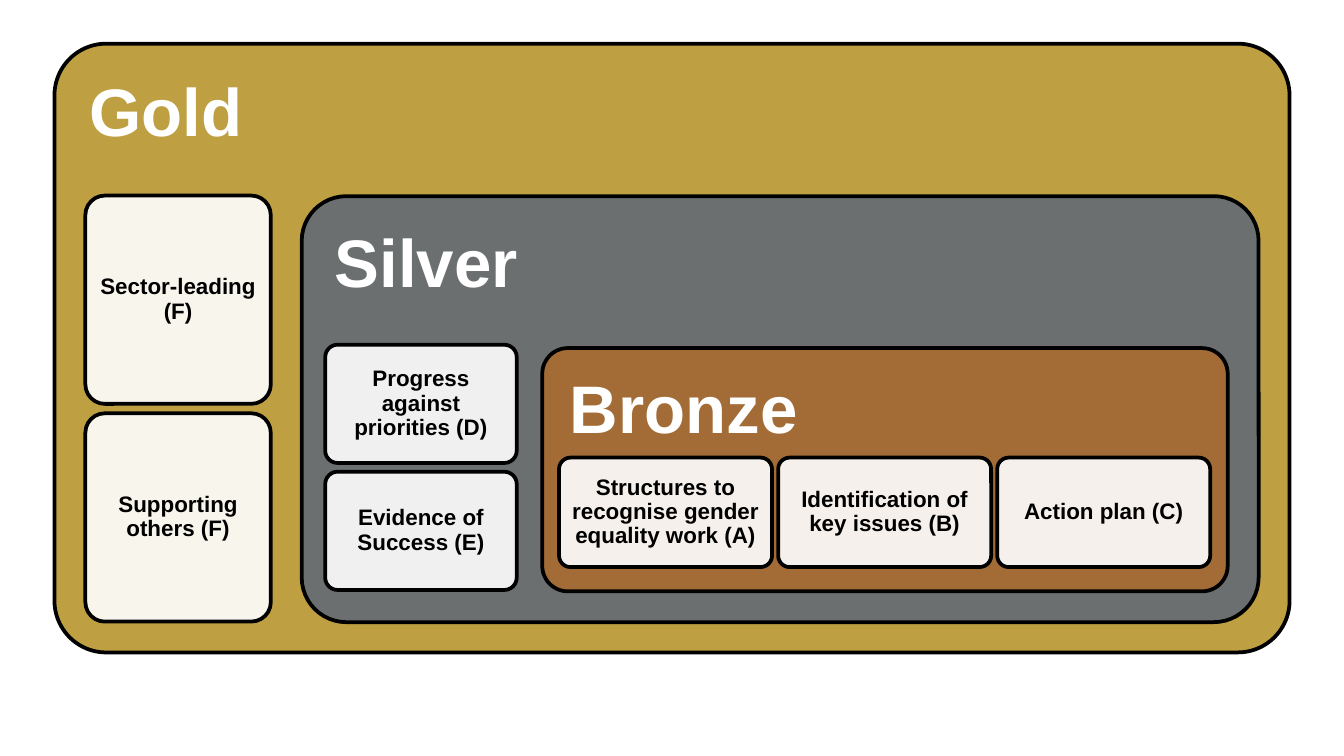
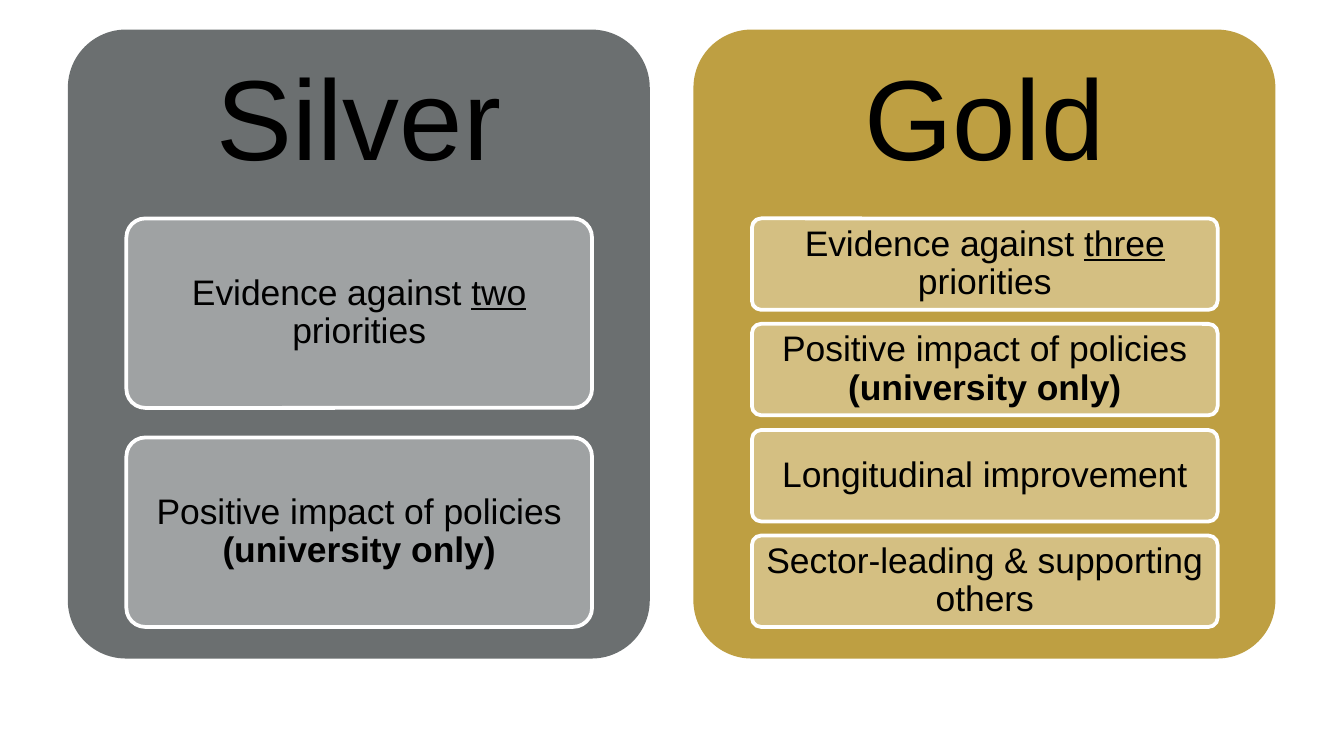
from lxml import etree
from pptx import Presentation
from pptx.dml.color import RGBColor
from pptx.enum.shapes import MSO_SHAPE
from pptx.enum.text import MSO_ANCHOR as ANCHOR, PP_ALIGN as ALIGN
from pptx.oxml.ns import qn
from pptx.util import Pt

PX = 4572
FONT = "Arial"
COLORS = {
    "gold": "BE9F42",
    "silver": "6B6F70",
    "bronze": "A36C36",
    "gold_card": "D4BF82",
    "silver_card": "9FA2A3",
    "white": "FFFFFF",
    "black": "000000",
}


def rgb(name):
    return RGBColor.from_string(COLORS[name])


def add_box(slide, box, runs, fill, line, size, color="black", radius=0.105, insets=(10, 10, 10, 10),
            bold=False, align=ALIGN.CENTER, anchor=ANCHOR.MIDDLE, opacity=100):
    sp = slide.shapes.add_shape(MSO_SHAPE.ROUNDED_RECTANGLE, *[v * PX for v in box])
    sp.shadow.inherit = False
    sp.adjustments[0] = radius
    sp.fill.solid()
    sp.fill.fore_color.rgb = rgb(fill)
    if opacity < 100:
        clr = sp._element.spPr.find(qn("a:solidFill"))[0]
        etree.SubElement(clr, qn("a:alpha")).set("val", str(opacity * 1000))
    if line:
        sp.line.color.rgb = rgb(line)
        sp.line.width = Pt(2)
    else:
        sp.line.fill.background()
    tf = sp.text_frame
    tf.word_wrap = True
    tf.vertical_anchor = anchor
    tf.margin_left, tf.margin_top, tf.margin_right, tf.margin_bottom = [v * PX for v in insets]
    p = tf.paragraphs[0]
    p.alignment = align
    p.line_spacing = 0.9
    for text, style in runs:
        r = p.add_run()
        r.text = text
        r.font.name = FONT
        r.font.size = Pt(size)
        r.font.color.rgb = rgb(color)
        r.font.bold = bold or style == "bold"
        r.font.underline = style == "underline"


prs = Presentation()
prs.slide_width = 2000 * PX
prs.slide_height = 1125 * PX
blank = prs.slide_layouts[6]

s = prs.slides.add_slide(blank)
levels = [
    ("Gold", "gold", (81, 65, 1838, 906), 0.085, (127, 291, 276, 310), (0, 324),
     ["Sector-leading (F)", "Supporting others (F)"]),
    ("Silver", "silver", (449, 292, 1424, 634), 0.105, (484, 513, 285, 176), (0, 189),
     ["Progress against priorities (D)", "Evidence of Success (E)"]),
    ("Bronze", "bronze", (807, 518, 1020, 362), 0.105, (832, 681, 317, 163), (326, 0),
     ["Structures to recognise gender equality work (A)", "Identification of key issues (B)",
      "Action plan (C)"]),
]
for name, fill, box, radius, (x, y, w, h), (dx, dy), criteria in levels:
    add_box(s, box, [(name, None)], fill, "black", 36, color="white", radius=radius,
            insets=(30, 30, 30, 30), bold=True, align=ALIGN.LEFT, anchor=ANCHOR.TOP)
    for i, text in enumerate(criteria):
        add_box(s, (x + i * dx, y + i * dy, w, h), [(text, None)], "white", "black", 12,
                bold=True, opacity=90)

s = prs.slides.add_slide(blank)
policies = [("Positive impact of policies ", None), ("(university only)", "bold")]
CARDS_TOP, CARDS_HEIGHT = 325, 608
awards = [
    ("Silver", "silver", 101, 282, [
        [("Evidence against ", None), ("two", "underline"), (" priorities", None)],
        policies,
    ]),
    ("Gold", "gold", 1032, 136, [
        [("Evidence against ", None), ("three", "underline"), (" priorities", None)],
        policies,
        [("Longitudinal improvement", None)],
        [("Sector-leading & supporting others", None)],
    ]),
]
for name, fill, x, h, cards in awards:
    add_box(s, (x, 44, 866, 936), [(name, None)], fill, None, 61, radius=0.1,
            insets=(25, 25, 25, 680))
    pitch = (CARDS_HEIGHT - h) / (len(cards) - 1)
    for i, runs in enumerate(cards):
        add_box(s, (x + 87, CARDS_TOP + round(i * pitch), 693, h), runs, fill + "_card", "white",
                19, radius=0.1, insets=(10, 8, 10, 8))

prs.save("out.pptx")
